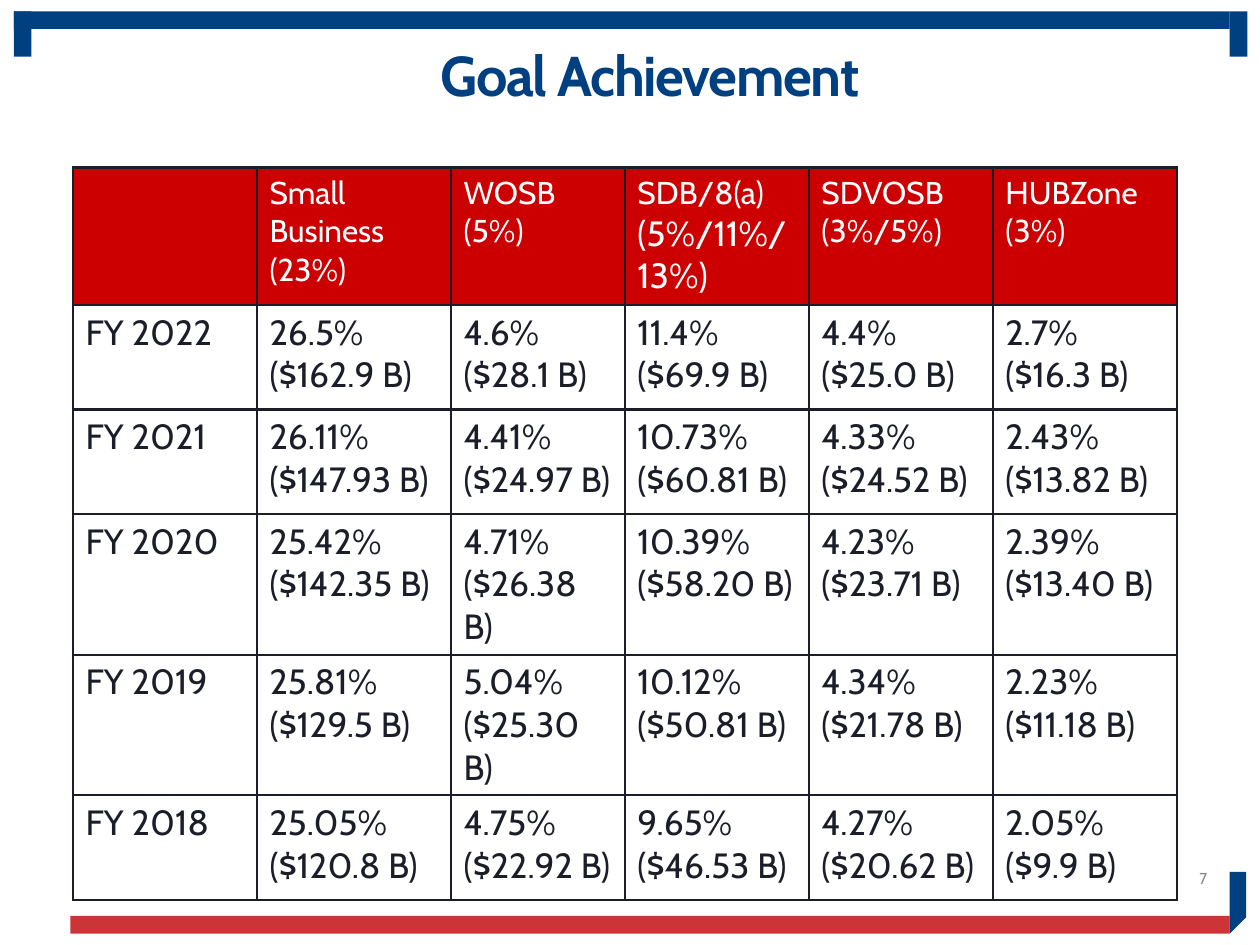
from lxml.etree import SubElement
from pptx import Presentation
from pptx.dml.color import RGBColor
from pptx.enum.shapes import MSO_SHAPE
from pptx.enum.text import MSO_ANCHOR, PP_ALIGN
from pptx.oxml.ns import qn
from pptx.util import Inches, Pt

NAVY = RGBColor(0x00, 0x3F, 0x80)
RED = RGBColor(0xCC, 0x35, 0x38)
HEADER_RED = RGBColor(0xCC, 0x00, 0x00)
INK = RGBColor(0x1B, 0x1E, 0x29)
GRAY = RGBColor(0x8B, 0x8B, 0x8D)
WHITE = RGBColor(0xFF, 0xFF, 0xFF)
FONT = "Cabin"

BARS = [
    (0.11, 0.09, 9.65, 0.14, NAVY),
    (9.76, 0.09, 0.14, 0.36, NAVY),
    (0.11, 0.09, 0.14, 0.36, NAVY),
    (0.56, 7.27, 9.2, 0.14, RED),
]
CORNER = [(9.76, 6.92), (9.89, 6.92), (9.89, 7.28), (9.76, 7.41)]

HEADERS = [
    [],
    [("Small Business (23%)", 18)],
    [("WOSB (5%)", 18)],
    [("SDB/8(a) ", 18), ("(5%/11%/13%)", 20)],
    [("SDVOSB (3%/5%)", 18)],
    [("HUBZone (3%)", 18)],
]
YEARS = [
    ["FY 2022", "26.5% ($162.9 B)", "4.6% ($28.1 B)", "11.4% ($69.9 B)",
     "4.4% ($25.0 B)", "2.7% ($16.3 B)"],
    ["FY 2021", "26.11% ($147.93 B)", "4.41% ($24.97 B)", "10.73% ($60.81 B)",
     "4.33% ($24.52 B)", "2.43% ($13.82 B)"],
    ["FY 2020", "25.42% ($142.35 B)", "4.71% ($26.38 B)", "10.39% ($58.20 B)",
     "4.23% ($23.71 B)", "2.39% ($13.40 B)"],
    ["FY 2019", "25.81% ($129.5 B)", "5.04% ($25.30 B)", "10.12% ($50.81 B)",
     "4.34% ($21.78 B)", "2.23% ($11.18 B)"],
    ["FY 2018", "25.05% ($120.8 B)", "4.75% ($22.92 B)", "9.65% ($46.53 B)",
     "4.27% ($20.62 B)", "2.05% ($9.9 B)"],
]
COL_WIDTHS = [1.46, 1.54, 1.38, 1.46, 1.46, 1.46]
ROW_HEIGHTS = [1.09] + [0.83] * len(YEARS)


def paint(sp, color):
    sp.shadow.inherit = False
    sp.fill.solid()
    sp.fill.fore_color.rgb = color
    sp.line.fill.background()


def add_text(s, box, text, size, color):
    tf = s.shapes.add_textbox(*map(Inches, box)).text_frame
    tf.word_wrap = True
    p = tf.paragraphs[0]
    p.alignment = PP_ALIGN.RIGHT
    p.text = text
    set_font(p.font, size, color)
    return tf


def set_font(font, size, color):
    font.name = FONT
    font.size = Pt(size)
    font.color.rgb = color


def add_borders(cell):
    tc_pr = cell._tc.get_or_add_tcPr()
    for side in ("lnL", "lnR", "lnT", "lnB"):
        ln = SubElement(tc_pr, qn(f"a:{side}"), w=str(Pt(1.5)))
        fill = SubElement(ln, qn("a:solidFill"))
        SubElement(fill, qn("a:srgbClr"), val=str(INK))


def fill_cell(cell, runs, color, background):
    add_borders(cell)
    cell.fill.solid()
    cell.fill.fore_color.rgb = background
    p = cell.text_frame.paragraphs[0]
    for text, size in runs:
        r = p.add_run()
        r.text = text
        set_font(r.font, size, color)


def add_goal_table(s):
    rows = [HEADERS] + [[[(text, 20)] for text in year] for year in YEARS]
    table = s.shapes.add_table(
        len(rows), len(COL_WIDTHS), Inches(0.58), Inches(1.33),
        Inches(sum(COL_WIDTHS)), Inches(sum(ROW_HEIGHTS))).table
    for column, width in zip(table.columns, COL_WIDTHS):
        column.width = Inches(width)
    for i, (row, height) in enumerate(zip(rows, ROW_HEIGHTS)):
        table.rows[i].height = Inches(height)
        color, background = (INK, WHITE) if i else (WHITE, HEADER_RED)
        for j, runs in enumerate(row):
            fill_cell(table.cell(i, j), runs, color, background)


def main():
    prs = Presentation()
    prs.slide_width, prs.slide_height = Inches(10), Inches(7.5)
    s = prs.slides.add_slide(prs.slide_layouts[6])

    for *box, color in BARS:
        paint(s.shapes.add_shape(MSO_SHAPE.RECTANGLE, *map(Inches, box)), color)
    points = [(Inches(x), Inches(y)) for x, y in CORNER]
    builder = s.shapes.build_freeform(*points[0])
    builder.add_line_segments(points[1:], close=True)
    paint(builder.convert_to_shape(), NAVY)

    add_goal_table(s)

    p = add_text(s, (2.75, 0.33, 4.17, 1), "Goal Achievement", 32, NAVY).paragraphs[0]
    p.font.bold = True
    p.line_spacing = 0.9
    p.runs[0].font._element.set("spc", "-80")

    tf = add_text(s, (7.43, 6.77, 2.25, 0.4), "7", 9, GRAY)
    tf.vertical_anchor = MSO_ANCHOR.MIDDLE

    prs.save("out.pptx")


if __name__ == "__main__":
    main()
